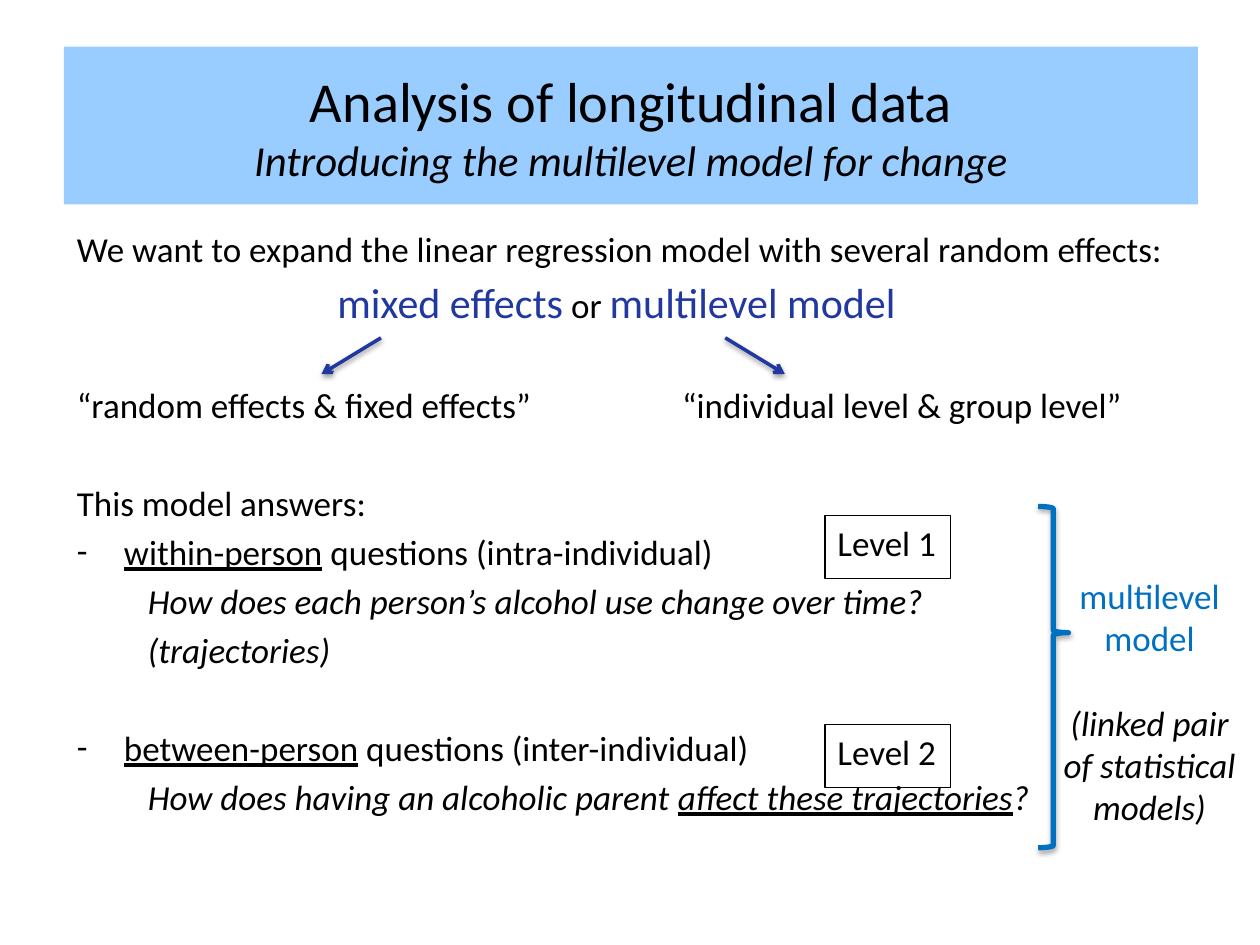
from dataclasses import dataclass
from typing import NamedTuple

from lxml.etree import SubElement
from pptx import Presentation
from pptx.dml.color import RGBColor
from pptx.enum.shapes import MSO_CONNECTOR, MSO_SHAPE
from pptx.enum.text import MSO_ANCHOR, PP_ALIGN
from pptx.oxml.ns import qn
from pptx.util import Cm, Pt


@dataclass(frozen=True)
class Theme:
    font: str = "Calibri"
    black: RGBColor = RGBColor(0, 0, 0)
    white: RGBColor = RGBColor(255, 255, 255)
    banner: RGBColor = RGBColor(0x99, 0xCC, 0xFF)
    navy: RGBColor = RGBColor(0x20, 0x38, 0xA0)
    blue: RGBColor = RGBColor(0, 0x70, 0xC0)
    title: float = 32.2
    subtitle: float = 24.4
    key: float = 24
    text: float = 20
    line_gap: float = 4
    blank_line: float = 28


class Box(NamedTuple):
    """Left, top, width and height in centimetres."""
    x: float
    y: float
    w: float
    h: float

    def lengths(self):
        return [Cm(value) for value in self]


THEME = Theme()


def add_run(paragraph, text, size=THEME.text, color=THEME.black, italic=False, underline=False):
    run = paragraph.add_run()
    run.text = text
    font = run.font
    font.name, font.size, font.color.rgb = THEME.font, Pt(size), color
    font.italic, font.underline = italic, underline


def add_frame(slide, box, fill=None, wrap=True):
    area = slide.shapes.add_textbox(*box.lengths())
    if fill is not None:
        area.fill.solid()
        area.fill.fore_color.rgb = fill
    area.text_frame.word_wrap = wrap
    return area


def add_paragraph(frame, align=PP_ALIGN.LEFT, before=0):
    first = frame.paragraphs[0]
    paragraph = frame.add_paragraph() if first.runs else first
    paragraph.alignment = align
    paragraph.space_before = Pt(before)
    return paragraph


def indent(paragraph, margin, dash=False):
    """Set the left margin in cm, with a hanging dash if wanted."""
    properties = paragraph._p.get_or_add_pPr()
    properties.set("marL", str(Cm(margin)))
    if dash:
        properties.set("indent", str(-Cm(margin)))
        SubElement(properties, qn("a:buFont"), typeface=THEME.font)
        SubElement(properties, qn("a:buChar"), char="-")


def add_tab_stop(paragraph, position):
    stops = SubElement(paragraph._p.get_or_add_pPr(), qn("a:tabLst"))
    SubElement(stops, qn("a:tab"), pos=str(Cm(position)), algn="l")


def add_shadow(shape, opacity):
    """Add a soft shadow just below the shape."""
    effects = SubElement(shape._element.spPr, qn("a:effectLst"))
    shadow = SubElement(effects, qn("a:outerShdw"), blurRad=str(Pt(3.1)),
                        dist=str(Pt(1.7)), dir="5400000", rotWithShape="0")
    color = SubElement(shadow, qn("a:srgbClr"), val=str(THEME.black))
    SubElement(color, qn("a:alpha"), val=str(opacity * 1000))


def add_title(slide, box):
    frame = add_frame(slide, box, THEME.banner).text_frame
    frame.vertical_anchor = MSO_ANCHOR.MIDDLE
    add_run(add_paragraph(frame, PP_ALIGN.CENTER), "Analysis of longitudinal data", THEME.title)
    add_run(add_paragraph(frame, PP_ALIGN.CENTER),
            "Introducing the multilevel model for change", THEME.subtitle, italic=True)


def add_body(slide, box):
    frame = add_frame(slide, box).text_frame
    gap = THEME.line_gap
    section_gap = gap + THEME.blank_line

    def line(before=gap):
        return add_paragraph(frame, before=before)

    add_run(line(), "We want to expand the linear regression model with several random effects:")

    names = line()
    indent(names, 5.25)
    add_run(names, "mixed effects", THEME.key, THEME.navy)
    add_run(names, " or ")
    add_run(names, "multilevel model", THEME.key, THEME.navy)

    meanings = line(section_gap)
    add_tab_stop(meanings, 12.2)
    add_run(meanings, "“random effects & fixed effects”\t“individual level & group level”")

    add_run(line(section_gap), "This model answers:")

    def question(subject, scope, before=gap):
        paragraph = line(before)
        indent(paragraph, 0.95, dash=True)
        add_run(paragraph, subject, underline=True)
        add_run(paragraph, f" questions ({scope})")

    def example(*parts):
        """Add an italic line whose every second part is underlined."""
        paragraph = line()
        indent(paragraph, 1.43)
        for number, part in enumerate(parts):
            add_run(paragraph, part, italic=True, underline=number % 2 == 1)

    question("within-person", "intra-individual")
    example("How does each person’s alcohol use change over time?")
    example("(trajectories)")
    question("between-person", "inter-individual", section_gap)
    example("How does having an alcoholic parent ", "affect these trajectories", "?")


def add_arrows(slide, box):
    """Draw two arrows spreading from the names above to the meanings below."""
    run = 1.2
    right = box.x + box.w
    for start, end in ((box.x + run, box.x), (right - run, right)):
        arrow = slide.shapes.add_connector(MSO_CONNECTOR.STRAIGHT, Cm(start), Cm(box.y),
                                           Cm(end), Cm(box.y + box.h))
        arrow.line.color.rgb = THEME.navy
        arrow.line.width = Pt(2)
        SubElement(arrow.line._get_or_add_ln(), qn("a:tailEnd"), type="arrow")
        add_shadow(arrow, 38)


def add_levels(slide, box):
    height = 1.27
    for number, top in enumerate((box.y, box.y + box.h - height), start=1):
        label = add_frame(slide, Box(box.x, top, box.w, height), THEME.white, wrap=False)
        label.line.color.rgb = THEME.black
        label.line.width = Pt(0.75)
        add_run(add_paragraph(label.text_frame), f"Level {number}")


def add_summary(slide, box):
    """Place the brace at the left of the box and its caption beside it."""
    caption = Box(box.x + 0.15, box.y + 1.25, box.w - 0.15, box.h - 1.25)
    frame = add_frame(slide, caption, THEME.white).text_frame
    add_run(add_paragraph(frame, PP_ALIGN.CENTER), "multilevel model", color=THEME.blue)
    add_run(add_paragraph(frame, PP_ALIGN.CENTER, before=24.4),
            "(linked pair of statistical models)", italic=True)

    brace = slide.shapes.add_shape(MSO_SHAPE.RIGHT_BRACE,
                                   *Box(box.x, box.y, 0.61, 6.88).lengths())
    brace.adjustments[0], brace.adjustments[1] = 0.08, 0.37
    brace.fill.background()
    brace.line.color.rgb = THEME.blue
    brace.line.width = Pt(3)
    add_shadow(brace, 35)


def main():
    deck = Presentation()
    deck.slide_width, deck.slide_height = Cm(25.4), Cm(19.05)
    slide = deck.slides.add_slide(deck.slide_layouts[6])
    # The labels lie behind the body, so their fill never hides its text.
    add_levels(slide, Box(16.63, 10.39, 2.54, 5.48))
    add_summary(slide, Box(20.93, 10.21, 4.34, 8.64))
    add_body(slide, Box(1.3, 4.47, 23.14, 14.5))
    add_title(slide, Box(1.29, 0.94, 22.86, 3.18))
    add_arrows(slide, Box(6.48, 6.81, 9.34, 0.73))
    deck.save("out.pptx")


if __name__ == "__main__":
    main()
